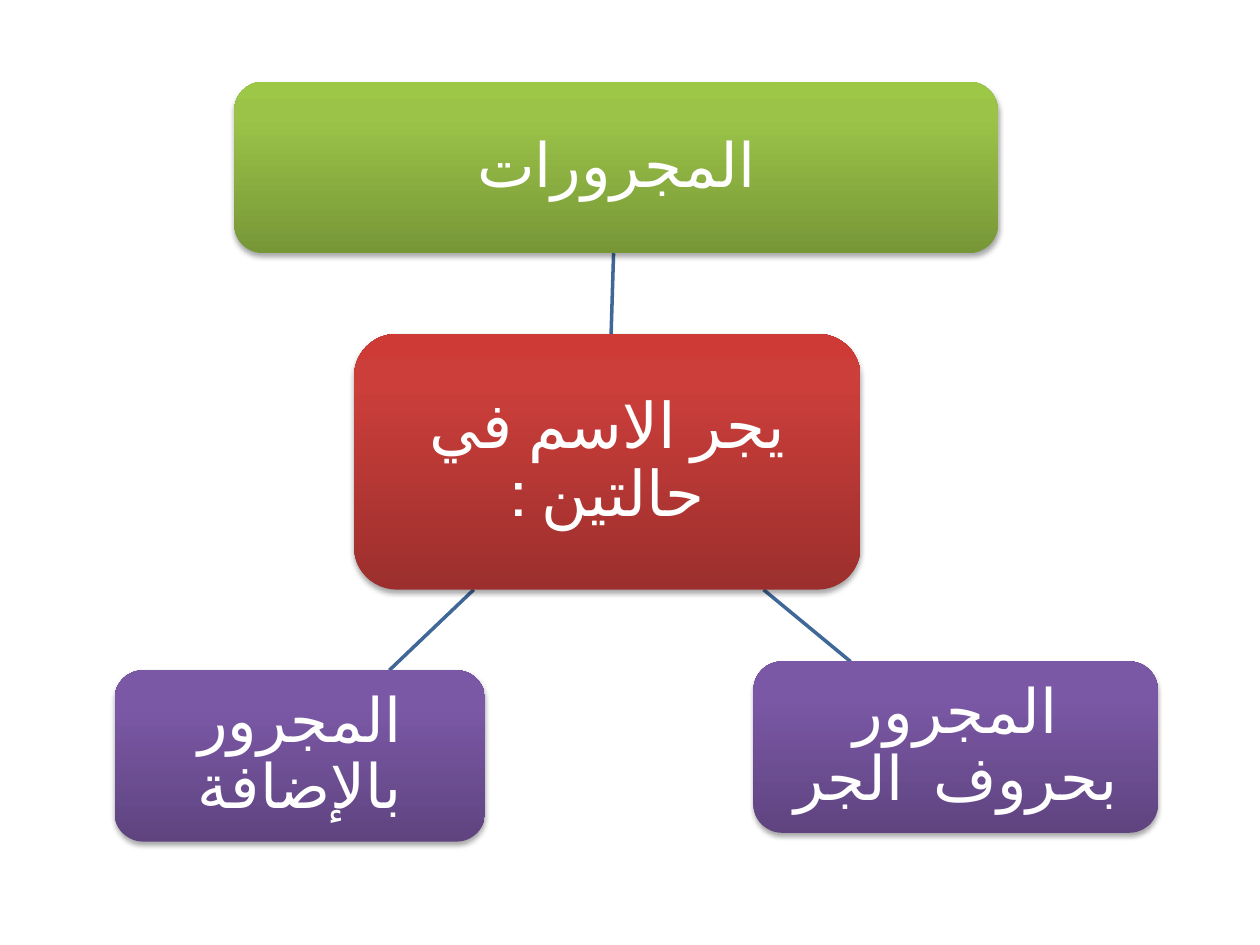
from copy import deepcopy
from dataclasses import dataclass

from lxml import etree
from pptx import Presentation
from pptx.dml.color import RGBColor
from pptx.enum.lang import MSO_LANGUAGE_ID
from pptx.enum.shapes import MSO_CONNECTOR, MSO_SHAPE
from pptx.enum.text import MSO_ANCHOR, PP_ALIGN
from pptx.oxml import parse_xml
from pptx.oxml.ns import qn
from pptx.util import Inches, Pt

ROUNDED = MSO_SHAPE.ROUNDED_RECTANGLE
STRAIGHT = MSO_CONNECTOR.STRAIGHT
CENTER = PP_ALIGN.CENTER
MIDDLE = MSO_ANCHOR.MIDDLE
ARABIC = MSO_LANGUAGE_ID.ARABIC

WHITE = RGBColor(0xFF, 0xFF, 0xFF)
LINE_BLUE = RGBColor(0x3F, 0x67, 0x97)
GREENS = (RGBColor(0x77, 0x97, 0x37), RGBColor(0x9B, 0xC3, 0x48), RGBColor(0x9D, 0xC7, 0x46))
REDS = (RGBColor(0x9C, 0x2F, 0x2D), RGBColor(0xCB, 0x3E, 0x3A), RGBColor(0xCE, 0x3B, 0x37))
PURPLES = (RGBColor(0x5F, 0x44, 0x80), RGBColor(0x7B, 0x58, 0xA6), RGBColor(0x7C, 0x57, 0xA8))
STOP_POSITIONS = (0, 0.8, 1)
FONT = "Calibri"
SHADOW = (
    '<a:outerShdw xmlns:a="http://schemas.openxmlformats.org/drawingml/2006/main"'
    f' blurRad="{Pt(3.1)}" dist="{Pt(1.8)}" dir="5400000" rotWithShape="0">'
    '<a:srgbClr val="000000"><a:alpha val="35000"/></a:srgbClr></a:outerShdw>'
)


@dataclass(frozen=True)
class Node:
    text: str
    left: float
    top: float
    width: float
    height: float
    colors: tuple[RGBColor, RGBColor, RGBColor]
    size: float = 35


@dataclass(frozen=True)
class Link:
    start: tuple[float, float]
    end: tuple[float, float]


NODES = (
    Node("يجر الاسم في حالتين :", 2.81, 2.65, 4.02, 2.03, REDS, 36),
    Node("المجرورات", 1.86, 0.65, 6.06, 1.36, GREENS),
    Node("المجرور بحروف  الجر", 5.98, 5.25, 3.21, 1.36, PURPLES),
    Node("المجرور بالإضافة", 0.91, 5.32, 2.94, 1.36, PURPLES),
)
LINKS = (
    Link((4.85, 2.65), (4.87, 2.01)),
    Link((6.06, 4.68), (6.75, 5.25)),
    Link((3.76, 4.68), (3.09, 5.32)),
)


def fill_gradient(box, colors: tuple[RGBColor, ...]) -> None:
    box.fill.gradient()
    box.fill.gradient_angle = 90
    stop_list = box.element.spPr.find(qn("a:gradFill")).find(qn("a:gsLst"))
    stop_list.append(deepcopy(stop_list[0]))
    for stop, color, position in zip(box.fill.gradient_stops, colors, STOP_POSITIONS):
        stop.color.rgb = color
        stop.position = position


def add_shadow(box) -> None:
    box.shadow.inherit = False
    box.element.spPr.find(qn("a:effectLst")).append(parse_xml(SHADOW))


def write_text(box, text: str, *, size: float, color: RGBColor) -> None:
    frame = box.text_frame
    frame.word_wrap = True
    frame.vertical_anchor = MIDDLE
    frame.margin_left = frame.margin_right = Inches(0.1)
    frame.margin_top = frame.margin_bottom = Inches(0.1)
    para = frame.paragraphs[0]
    para.alignment = CENTER
    para.line_spacing = 0.9
    para._p.get_or_add_pPr().set("rtl", "1")
    span = para.add_run()
    span.text = text
    span.font.size = Pt(size)
    span.font.name = FONT
    span.font.language_id = ARABIC
    span.font.color.rgb = color


def draw_node(page, node: Node) -> None:
    box = page.shapes.add_shape(
        ROUNDED, Inches(node.left), Inches(node.top), Inches(node.width), Inches(node.height)
    )
    fill_gradient(box, node.colors)
    box.line.fill.background()
    add_shadow(box)
    write_text(box, node.text, size=node.size, color=WHITE)


def draw_link(page, link: Link) -> None:
    ends = [Inches(value) for value in link.start + link.end]
    connector = page.shapes.add_connector(STRAIGHT, *ends)
    connector.line.color.rgb = LINE_BLUE
    connector.line.width = Pt(2)
    etree.SubElement(connector._element.spPr, qn("a:effectLst"))


def main() -> None:
    deck = Presentation()
    deck.slide_width = Inches(10)
    deck.slide_height = Inches(7.5)
    page = deck.slides.add_slide(deck.slide_layouts.get_by_name("Blank"))
    for link in LINKS:
        draw_link(page, link)
    for node in NODES:
        draw_node(page, node)
    deck.save("out.pptx")


if __name__ == "__main__":
    main()
